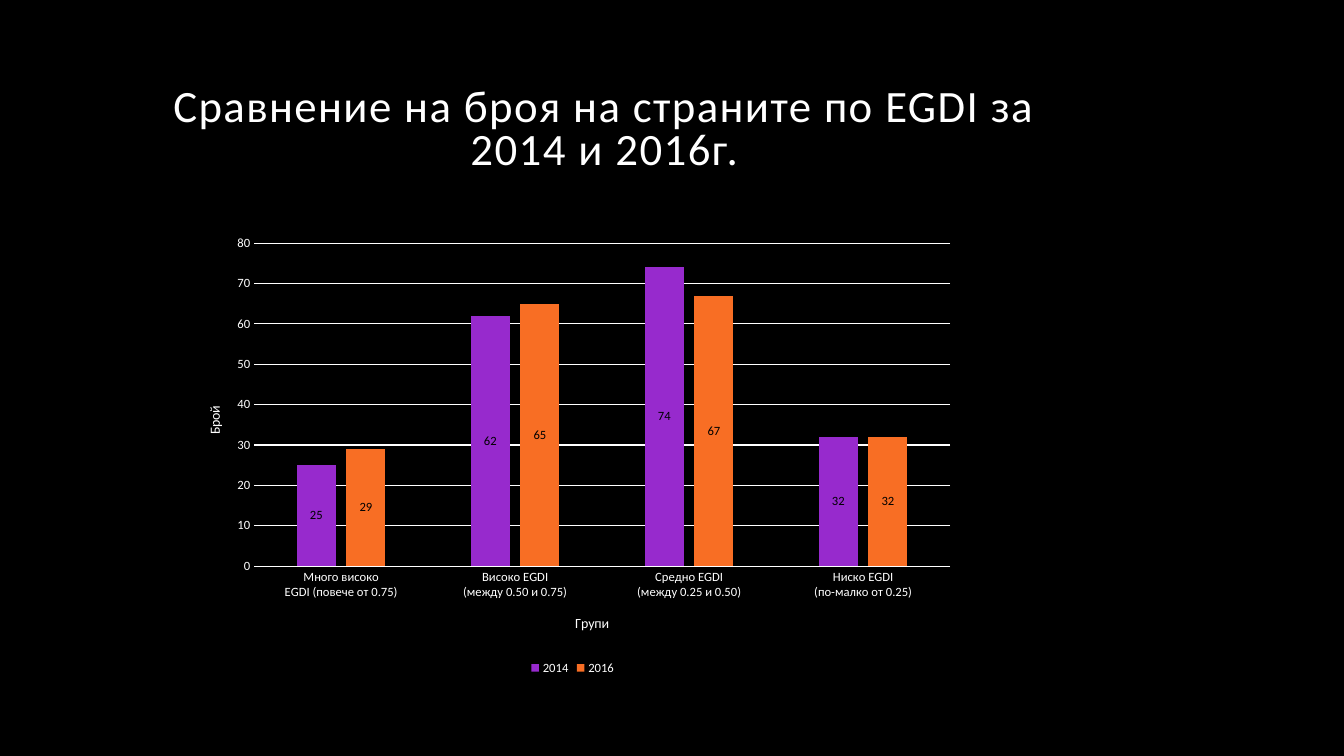
from dataclasses import dataclass

from lxml import etree
from pptx import Presentation
from pptx import util as u
from pptx.chart.data import CategoryChartData
from pptx.dml.color import RGBColor
from pptx.enum import chart as ch, text
from pptx.oxml.ns import qn

FONT, WHITE, BLACK = "Calibri", "FFFFFF", "000000"


@dataclass(frozen=True)
class YearSeries:
    year: str
    counts: tuple[int, ...]
    color: str


@dataclass(frozen=True)
class AxisStyle:
    title: str
    title_at: dict[str, float]


GROUPS = (
    "Много високо\nEGDI (повече от 0.75)",
    "Високо EGDI\n(между 0.50 и 0.75)",
    "Средно EGDI\n(между 0.25 и 0.50)",
    "Ниско EGDI\n(по-малко от 0.25)",
)
YEARS = (
    YearSeries("2014", (25, 62, 74, 32), "972ACD"),
    YearSeries("2016", (29, 65, 67, 32), "F86E24"),
)
GROUP_AXIS = AxisStyle("Групи", {"x": 0.5, "y": 0.85})
COUNT_AXIS = AxisStyle("Брой", {"x": 0.03, "y": 0.39})


def rgb(color: str) -> RGBColor:
    return RGBColor.from_string(color)


def set_attrs(target, values: dict) -> None:
    for name, value in values.items():
        setattr(target, name, value)


def style_font(font, size: float, color: str = WHITE) -> None:
    set_attrs(font, {"name": FONT, "size": u.Pt(size), "bold": False})
    font.color.rgb = rgb(color)


def style_line(line, color: str = WHITE) -> None:
    line.color.rgb = rgb(color)
    line.width = u.Pt(0.75)


def place(element, index: int, fractions: dict[str, float], inner: bool = False) -> None:
    """Give a chart part a manual layout in fractions of the chart area."""
    for old in element.findall(qn("c:layout")):
        element.remove(old)
    layout = etree.Element(qn("c:layout"))
    manual = etree.SubElement(layout, qn("c:manualLayout"))
    if inner:
        etree.SubElement(manual, qn("c:layoutTarget"), val="inner")
    for key in ("x", "y"):
        etree.SubElement(manual, qn(f"c:{key}Mode"), val="edge")
    for key, value in fractions.items():
        etree.SubElement(manual, qn(f"c:{key}"), val=str(value))
    element.insert(index, layout)


def style_axis(axis, style: AxisStyle) -> None:
    set_attrs(axis, {"major_tick_mark": ch.XL_TICK_MARK.NONE,
                     "minor_tick_mark": ch.XL_TICK_MARK.NONE})
    style_font(axis.tick_labels.font, 9)
    p = axis.axis_title.text_frame.paragraphs[0]
    r = p.add_run()
    r.text = style.title
    style_font(r.font, 10)
    place(axis.axis_title.element, 1, style.title_at)


def add_title(s) -> None:
    sp = s.shapes.title
    set_attrs(sp, {"left": u.Inches(1.15), "top": u.Inches(0.68),
                   "width": u.Inches(9.69), "height": u.Inches(1.1)})
    tf = sp.text_frame
    set_attrs(tf, {"vertical_anchor": text.MSO_ANCHOR.BOTTOM, "word_wrap": True,
                   "auto_size": text.MSO_AUTO_SIZE.NONE})
    p = tf.paragraphs[0]
    set_attrs(p, {"alignment": text.PP_ALIGN.CENTER, "line_spacing": 0.8})
    r = p.add_run()
    r.text = "Сравнение на броя на страните по EGDI за 2014 и 2016г."
    style_font(r.font, 32)
    r.font._element.set("spc", "100")


def add_group_chart(s) -> None:
    data = CategoryChartData()
    data.categories = GROUPS
    for series in YEARS:
        data.add_series(series.year, series.counts)
    chart = s.shapes.add_chart(
        ch.XL_CHART_TYPE.COLUMN_CLUSTERED, u.Inches(1.78), u.Inches(2.25),
        u.Inches(7.8), u.Inches(4.49), data).chart
    style_font(chart.font, 10)
    set_attrs(chart, {"has_title": False, "has_legend": True})
    set_attrs(chart.legend, {"position": ch.XL_LEGEND_POSITION.BOTTOM,
                             "include_in_layout": False})
    style_font(chart.legend.font, 9)

    style_axis(chart.category_axis, GROUP_AXIS)
    style_line(chart.category_axis.format.line)
    counts = chart.value_axis
    style_axis(counts, COUNT_AXIS)
    set_attrs(counts, {"minimum_scale": 0, "maximum_scale": 80, "major_unit": 10})
    counts.format.line.fill.background()
    style_line(counts.major_gridlines.format.line)

    plot = chart.plots[0]
    set_attrs(plot, {"gap_width": 219, "overlap": -27, "vary_by_categories": False})
    for bars, series in zip(plot.series, YEARS):
        bars.format.fill.solid()
        bars.format.fill.fore_color.rgb = rgb(series.color)
        labels = bars.data_labels
        set_attrs(labels, {"show_value": True,
                           "position": ch.XL_LABEL_POSITION.CENTER})
        style_font(labels.font, 9, BLACK)
    plot_area = chart.element.find(f".//{qn('c:plotArea')}")
    place(plot_area, 0, {"x": 0.095, "y": 0.036, "w": 0.885, "h": 0.714}, inner=True)


def main() -> None:
    prs = Presentation()
    set_attrs(prs, {"slide_width": u.Inches(13.33), "slide_height": u.Inches(7.5)})
    s = prs.slides.add_slide(prs.slide_layouts.get_by_name("Title Only"))
    s.background.fill.solid()
    s.background.fill.fore_color.rgb = rgb(BLACK)
    add_title(s)
    add_group_chart(s)
    prs.save("out.pptx")


if __name__ == "__main__":
    main()
